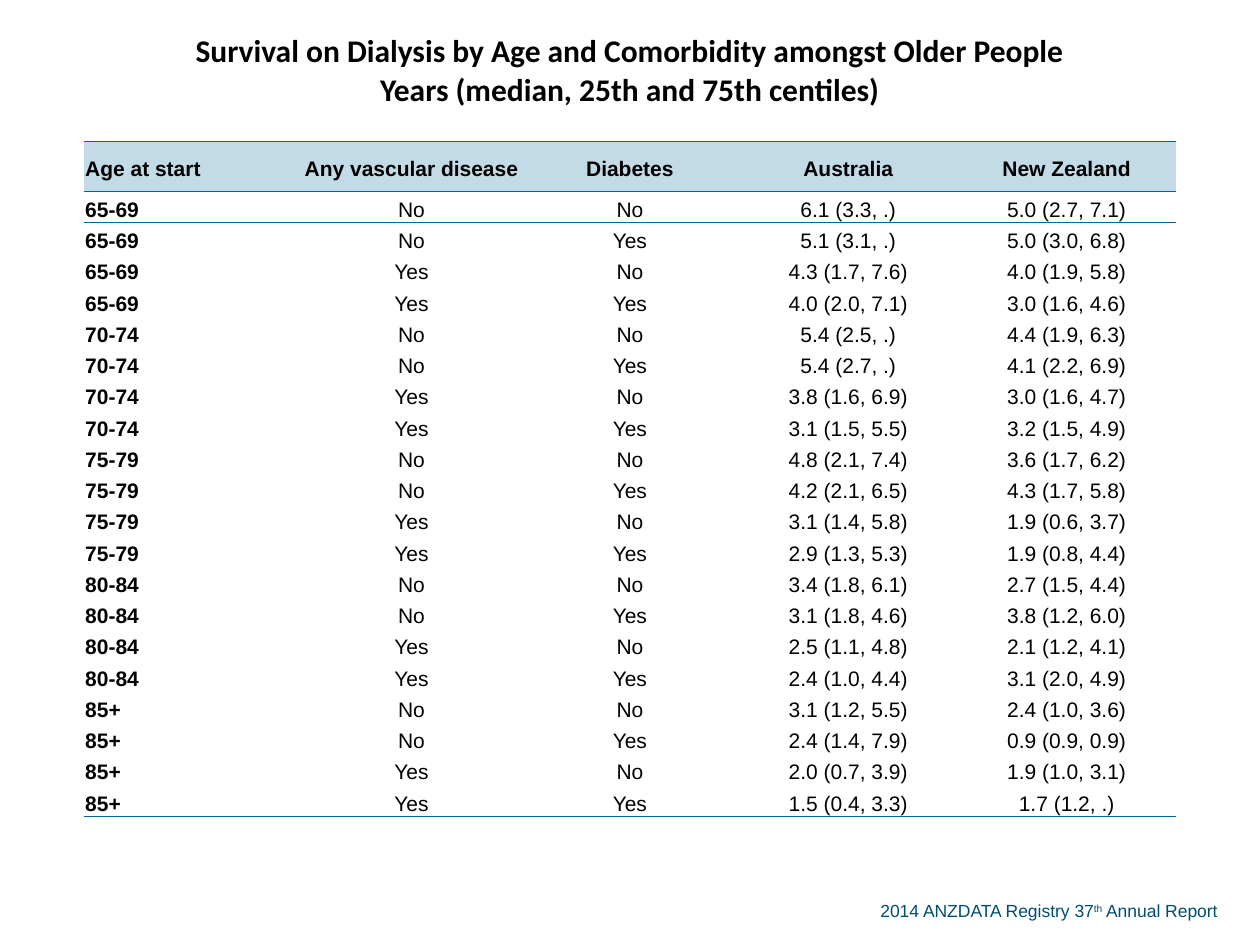
from itertools import product
from lxml import etree
from pptx import Presentation
from pptx import util as u
from pptx.dml.color import RGBColor
from pptx.enum import text
from pptx.oxml.ns import qn

TITLE = ("Survival on Dialysis by Age and Comorbidity amongst Older People\v"
         "Years (median, 25th and 75th centiles)")
HEADS = ["Age at start", "Any vascular disease", "Diabetes", "Australia", "New Zealand"]
AGES = ["65-69", "70-74", "75-79", "80-84", "85+"]
FLAGS = ["No", "Yes"]
# Australia and New Zealand, for each age, vascular disease and diabetes
YEARS = [
    ("6.1 (3.3, .)", "5.0 (2.7, 7.1)"),
    ("5.1 (3.1, .)", "5.0 (3.0, 6.8)"),
    ("4.3 (1.7, 7.6)", "4.0 (1.9, 5.8)"),
    ("4.0 (2.0, 7.1)", "3.0 (1.6, 4.6)"),
    ("5.4 (2.5, .)", "4.4 (1.9, 6.3)"),
    ("5.4 (2.7, .)", "4.1 (2.2, 6.9)"),
    ("3.8 (1.6, 6.9)", "3.0 (1.6, 4.7)"),
    ("3.1 (1.5, 5.5)", "3.2 (1.5, 4.9)"),
    ("4.8 (2.1, 7.4)", "3.6 (1.7, 6.2)"),
    ("4.2 (2.1, 6.5)", "4.3 (1.7, 5.8)"),
    ("3.1 (1.4, 5.8)", "1.9 (0.6, 3.7)"),
    ("2.9 (1.3, 5.3)", "1.9 (0.8, 4.4)"),
    ("3.4 (1.8, 6.1)", "2.7 (1.5, 4.4)"),
    ("3.1 (1.8, 4.6)", "3.8 (1.2, 6.0)"),
    ("2.5 (1.1, 4.8)", "2.1 (1.2, 4.1)"),
    ("2.4 (1.0, 4.4)", "3.1 (2.0, 4.9)"),
    ("3.1 (1.2, 5.5)", "2.4 (1.0, 3.6)"),
    ("2.4 (1.4, 7.9)", "0.9 (0.9, 0.9)"),
    ("2.0 (0.7, 3.9)", "1.9 (1.0, 3.1)"),
    ("1.5 (0.4, 3.3)", "1.7 (1.2, .)"),
]
NOTE = [("2014 ANZDATA Registry 37", 0), ("th", 30000), (" Annual Report", 0)]

BLACK, RULE, BAND, NAVY = "000000", "006699", "C2DBE7", "004D73"
NO_GRID = "{2D5ABB26-0587-4C30-8999-92F81FD0307C}"
TITLE_H, HEAD_H, ROW_H = 80.6, 28.8, 17.88
LEFT, WIDTH = 48, 624
CELL = {"margin_left": u.Pt(0.72), "margin_right": u.Pt(0.72),
        "margin_top": u.Pt(0.72), "margin_bottom": 0,
        "vertical_anchor": text.MSO_ANCHOR.MIDDLE}
SPACE = {"line_spacing": 1.19, "space_after": u.Pt(14)}


def put(item, vals):
    for name, val in vals.items():
        setattr(item, name, val)


def tint(item, hue):
    item.rgb = RGBColor.from_string(hue)


def style(font, face, size, bold, hue):
    put(font, {"name": face, "size": u.Pt(size), "bold": bold})
    tint(font.color, hue)


def rule(cell, side):
    """Draw a thin line on one side of a cell; call before setting the fill."""
    line = etree.SubElement(cell._tc.get_or_add_tcPr(), qn("a:ln" + side), w=str(u.Pt(0.5)))
    fill = etree.SubElement(line, qn("a:solidFill"))
    etree.SubElement(fill, qn("a:srgbClr"), val=RULE)


def write(cell, words, face, size, bold, mid, space):
    put(cell, CELL)
    cell.text = words
    para = cell.text_frame.paragraphs[0]
    para.alignment = text.PP_ALIGN.CENTER if mid else text.PP_ALIGN.LEFT
    put(para, space)
    for run in para.runs:
        style(run.font, face, size, bold, BLACK)


def grid(slide):
    combos = product(AGES, FLAGS, FLAGS)
    rows = [HEADS] + [[*combo, *years] for combo, years in zip(combos, YEARS)]
    highs = [TITLE_H, HEAD_H] + [ROW_H] * len(YEARS)
    table = slide.shapes.add_table(len(highs), len(HEADS), u.Pt(LEFT), 0,
                                   u.Pt(WIDTH), u.Pt(sum(highs))).table
    put(table, {"first_row": False, "horz_banding": False})
    table._tbl.tblPr.find(qn("a:tableStyleId")).text = NO_GRID
    for row, high in zip(table.rows, highs):
        row.height = u.Pt(high)

    table.cell(0, 0).merge(table.cell(0, len(HEADS) - 1))
    write(table.cell(0, 0), TITLE, "Calibri", 18, True, True, {})
    for r, row in enumerate(rows, 1):
        for c, words in enumerate(row):
            write(table.cell(r, c), words, "Arial", 12, r == 1 or c == 0, c > 0, SPACE)

    sides = {0: "B", 1: "TB", 2: "T", len(rows): "B"}
    for r, row in enumerate(table.rows):
        for cell in row.cells:
            for side in sides.get(r, ""):
                rule(cell, side)
            if r == 1:
                cell.fill.solid()
                tint(cell.fill.fore_color, BAND)
            else:
                cell.fill.background()


def note(slide):
    frame = slide.shapes.add_textbox(u.Pt(496), u.Pt(511), u.Pt(215.5), u.Pt(19.4)).text_frame
    put(frame, {"word_wrap": True, "auto_size": text.MSO_AUTO_SIZE.SHAPE_TO_FIT_TEXT})
    for words, lift in NOTE:
        run = frame.paragraphs[0].add_run()
        run.text = words
        style(run.font, "Arial", 10, False, NAVY)
        if lift:
            run.font._element.set("baseline", str(lift))


def main():
    deck = Presentation()
    put(deck, {"slide_width": u.Pt(720), "slide_height": u.Pt(540)})
    slide = deck.slides.add_slide(deck.slide_layouts[6])
    note(slide)
    grid(slide)
    deck.save("out.pptx")


if __name__ == "__main__":
    main()
